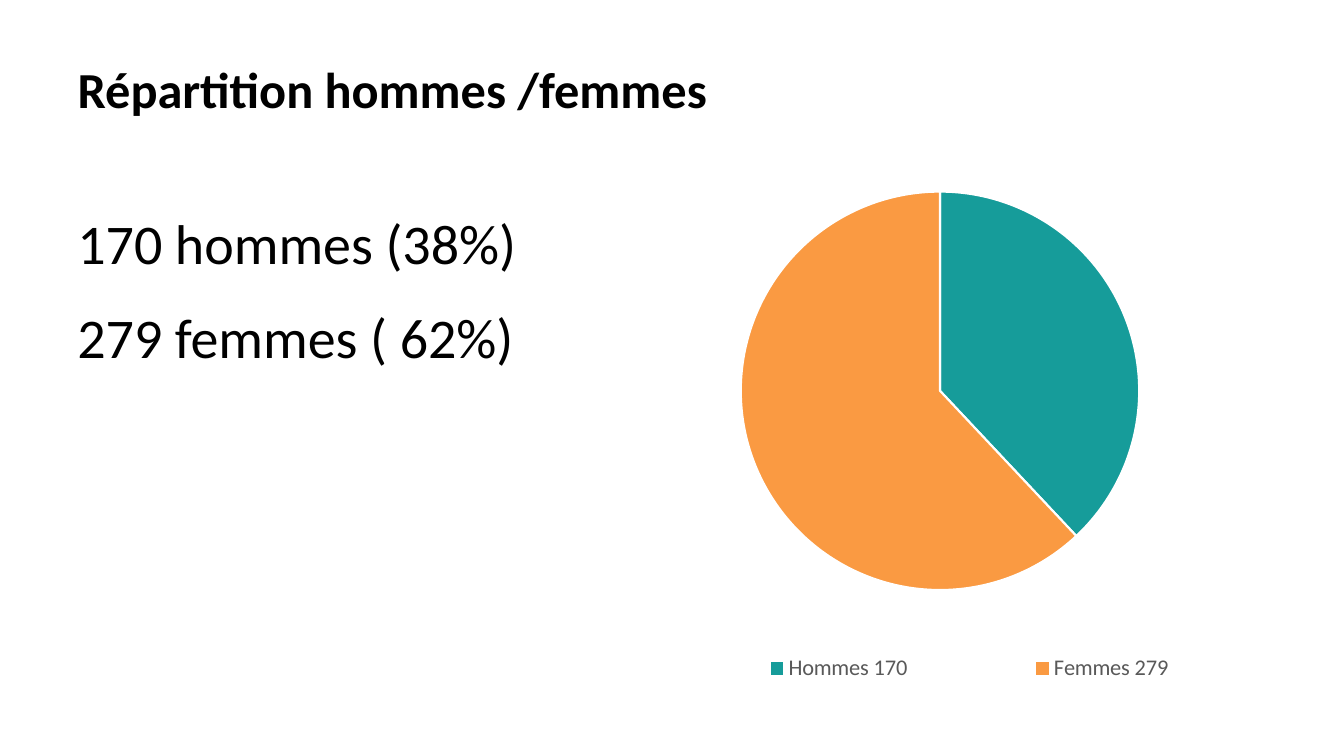
from dataclasses import dataclass

from lxml import etree
from pptx import Presentation
from pptx import util as u
from pptx.chart.data import CategoryChartData
from pptx.dml.color import RGBColor
from pptx.enum import chart as ch
from pptx.enum import text as t
from pptx.oxml import ns


@dataclass(frozen=True)
class Theme:
    font: str = "Calibri"
    ink: str = "000000"
    grey: str = "595959"
    edge: str = "FFFFFF"
    slices: tuple = ("169C9A", "FA9A42")
    head: int = 36
    body: int = 40
    key: int = 16


def style(font, look, size, color, bold=False):
    font.name, font.size, font.bold = look.font, u.Pt(size), bold
    font.color.rgb = RGBColor.from_string(color)


def write(frame, look, lines, size, bold=False, space=1.0, gap=0):
    """Fill a text frame, one paragraph per line."""
    frame.word_wrap = True
    frame.auto_size = t.MSO_AUTO_SIZE.NONE
    frame.vertical_anchor = t.MSO_ANCHOR.TOP
    for i, line in enumerate(lines):
        para = frame.add_paragraph() if i else frame.paragraphs[0]
        para.alignment = t.PP_ALIGN.LEFT
        para.line_spacing = space
        para.space_before = u.Pt(gap if i else 0)
        run = para.add_run()
        run.text = line
        style(run.font, look, size, look.ink, bold)


def place(owner, kind, x, y, w, h):
    """Give a chart part a fixed layout, as fractions of the chart."""
    for old in owner.findall(ns.qn("c:layout")):
        owner.remove(old)
    layout = etree.Element(ns.qn("c:layout"))
    manual = etree.SubElement(layout, ns.qn("c:manualLayout"))
    parts = [("xMode", "edge"), ("yMode", "edge"),
             ("x", x), ("y", y), ("w", w), ("h", h)]
    if kind == "plot":
        parts.insert(0, ("layoutTarget", "inner"))
    for tag, val in parts:
        etree.SubElement(manual, ns.qn("c:" + tag)).set("val", str(val))
    owner.insert(0 if kind == "plot" else 1, layout)


class Deck:
    def __init__(self, look):
        self.look = look
        self.prs = Presentation()
        self.prs.slide_width = u.Cm(33.87)
        self.prs.slide_height = u.Cm(19.05)
        self.slide = self.prs.slides.add_slide(self.prs.slide_layouts[5])

    def title(self, line, *box):
        shape = self.slide.shapes.title
        shape.left, shape.top, shape.width, shape.height = map(u.Cm, box)
        write(shape.text_frame, self.look, [line], self.look.head,
              bold=True, space=0.9)

    def text(self, lines, *box):
        shape = self.slide.shapes.add_textbox(*map(u.Cm, box))
        write(shape.text_frame, self.look, lines, self.look.body,
              space=1.2, gap=10)

    def pie(self, shares, *box):
        data = CategoryChartData()
        data.categories = list(shares)
        data.add_series("Series 1", list(shares.values()))
        chart = self.slide.shapes.add_chart(
            ch.XL_CHART_TYPE.PIE, *map(u.Cm, box), data).chart
        style(chart.font, self.look, self.look.key, self.look.ink)
        chart.has_title = False
        # Slices
        plot = chart.plots[0]
        plot.vary_by_categories = True
        for i, color in enumerate(self.look.slices):
            form = plot.series[0].points[i].format
            form.fill.solid()
            form.fill.fore_color.rgb = RGBColor.from_string(color)
            form.line.width = u.Pt(1.5)
            form.line.color.rgb = RGBColor.from_string(self.look.edge)
        # Legend
        chart.has_legend = True
        key = chart.legend
        key.position = ch.XL_LEGEND_POSITION.BOTTOM
        key.include_in_layout = False
        style(key.font, self.look, self.look.key, self.look.grey)
        # Layout of the plot and the legend
        area = chart.element.find(".//" + ns.qn("c:plotArea"))
        place(area, "plot", 0.15, 0.2, 0.61, 0.6)
        place(chart.element.find(".//" + ns.qn("c:legend")), "key",
              0.01, 0.86, 0.98, 0.07)


def main():
    deck = Deck(Theme())
    # Heading and figures
    deck.title("Répartition hommes /femmes", 1.7, 1.52, 29.6, 3.15)
    deck.text(["170 hommes (38%)", "279 femmes ( 62%)"],
              1.7, 4.78, 30.94, 12.75)
    # Share of each group
    deck.pie({"Hommes 170": 38, "Femmes 279": 62}, 16.2, 1, 16.46, 17.7)
    deck.prs.save("out.pptx")


if __name__ == "__main__":
    main()
